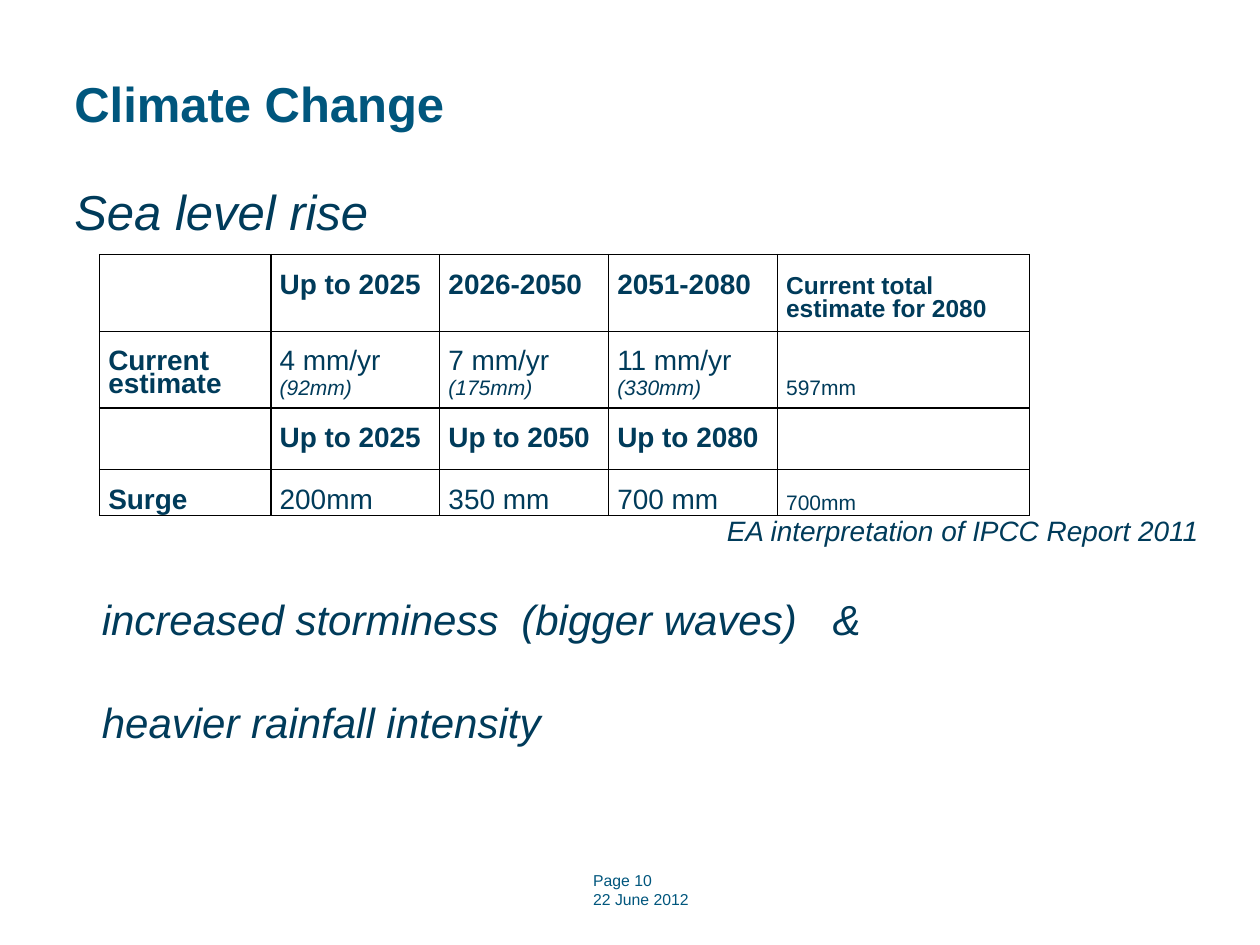
from typing import NamedTuple

from lxml import etree
from pptx import Presentation
from pptx import util as u
from pptx.dml.color import RGBColor
from pptx.enum import text
from pptx.oxml.ns import qn

NAVY = RGBColor(0x00, 0x3B, 0x5A)
TEAL = RGBColor(0x00, 0x56, 0x7D)
BLACK = RGBColor(0x00, 0x00, 0x00)
FONT = "Arial"
UNIT = u.Inches(0.1)  # the slide is a grid of 100 columns by 75 rows
TABLE_LINE = u.Pt(13)


class Box(NamedTuple):
    """Left, top, width and height in grid units."""
    left: float
    top: float
    width: float
    height: float

    def lengths(self) -> list[u.Emu]:
        return [u.Emu(round(v * UNIT)) for v in self]


class Style(NamedTuple):
    size: float
    color: RGBColor = NAVY
    bold: bool = False
    italic: bool = False


class Line(NamedTuple):
    words: str
    style: Style


class Cell(NamedTuple):
    lines: tuple[Line, ...] = ()
    skip: int = 1  # table lines left free above the text


TITLE = Style(28, TEAL, bold=True)
SUBTITLE = Style(28, italic=True)
EFFECT = Style(24, italic=True)
SOURCE = Style(16, italic=True)
FOOTER = Style(9, TEAL)
HEAD = Style(16, bold=True)
SMALL_HEAD = Style(14, bold=True)
VALUE = Style(16)
TOTAL = Style(12)
AMOUNT = Style(12, italic=True)


def one(words: str, style: Style, skip: int = 1) -> Cell:
    return Cell((Line(words, style),), skip)


def rate(yearly: str, amount: str) -> Cell:
    return Cell((Line(yearly, VALUE), Line(amount, AMOUNT)))


COLUMNS = (13.6, 13.4, 13.4, 13.4, 20)
ROWS = (6.1, 6.1, 3.65, 3.65)
CELLS = (
    (Cell(), one("Up to 2025", HEAD), one("2026-2050", HEAD), one("2051-2080", HEAD),
     one("Current total estimate for 2080", SMALL_HEAD)),
    (Cell((Line("Current", HEAD), Line("estimate", HEAD))), rate("4 mm/yr", "(92mm)"),
     rate("7 mm/yr", "(175mm)"), rate("11 mm/yr", "(330mm)"), one("597mm", TOTAL, skip=2)),
    (Cell(), *(one(f"Up to {year}", HEAD) for year in (2025, 2050, 2080)), Cell()),
    (one("Surge", HEAD), *(one(v, VALUE) for v in ("200mm", "350 mm", "700 mm")),
     one("700mm", TOTAL)),
)


def write(tf, lines: tuple[Line, ...]) -> None:
    for i, line in enumerate(lines):
        p = tf.add_paragraph() if i else tf.paragraphs[0]
        p.alignment = text.PP_ALIGN.LEFT
        r = p.add_run()
        r.text = line.words
        r.font.name = FONT
        r.font.size = u.Pt(line.style.size)
        r.font.bold = line.style.bold
        r.font.italic = line.style.italic
        r.font.color.rgb = line.style.color


def fill_placeholder(sp, box: Box, line: Line) -> None:
    sp.left, sp.top, sp.width, sp.height = box.lengths()
    tf = sp.text_frame
    tf.margin_left = 0
    tf.auto_size = text.MSO_AUTO_SIZE.NONE
    write(tf, (line,))


def add_text(slide, box: Box, lines: tuple[Line, ...]):
    tf = slide.shapes.add_textbox(*box.lengths()).text_frame
    tf.word_wrap = True
    write(tf, lines)
    return tf


def remove_bullet(p) -> None:
    pPr = p._p.get_or_add_pPr()
    pPr.set("marL", "0")
    pPr.set("indent", "0")
    etree.SubElement(pPr, qn("a:buNone"))


def add_tab_stops(p, stops: tuple[float, ...]) -> None:
    tabs = etree.SubElement(p._p.get_or_add_pPr(), qn("a:tabLst"))
    for stop in stops:
        etree.SubElement(tabs, qn("a:tab"), pos=str(round(stop * UNIT)), algn="l")


def draw_borders(cell) -> None:
    tcPr = cell._tc.get_or_add_tcPr()
    for i, side in enumerate("LRTB"):
        ln = etree.Element(qn(f"a:ln{side}"), w=str(u.Pt(1)))
        solid = etree.SubElement(ln, qn("a:solidFill"))
        etree.SubElement(solid, qn("a:srgbClr"), val=str(BLACK))
        tcPr.insert(i, ln)


def add_estimates(slide, left: float, top: float) -> None:
    box = Box(left, top, sum(COLUMNS), sum(ROWS))
    table = slide.shapes.add_table(len(ROWS), len(COLUMNS), *box.lengths()).table
    table.first_row = table.horz_banding = False
    for column, width in zip(table.columns, COLUMNS):
        column.width = u.Emu(round(width * UNIT))
    for row, height, contents in zip(table.rows, ROWS, CELLS):
        row.height = u.Emu(round(height * UNIT))
        for cell, content in zip(row.cells, contents):
            cell.margin_left = cell.margin_right = u.Inches(0.07)
            cell.margin_top = content.skip * TABLE_LINE
            cell.margin_bottom = 0
            cell.fill.background()
            draw_borders(cell)
            write(cell.text_frame, content.lines)
            for p in cell.text_frame.paragraphs:
                p.line_spacing = TABLE_LINE


def main() -> None:
    prs = Presentation()
    prs.slide_width, prs.slide_height = 100 * UNIT, 75 * UNIT
    slide = prs.slides.add_slide(prs.slide_layouts[1])

    title, body = slide.placeholders
    fill_placeholder(title, Box(5.9, 5.2, 91, 5.9), Line("Climate Change", TITLE))
    fill_placeholder(body, Box(5.9, 13.9, 90.6, 5.9), Line("Sea level rise", SUBTITLE))
    p = body.text_frame.paragraphs[0]
    p.space_before = u.Pt(0)
    remove_bullet(p)

    add_estimates(slide, 7.9, 20.2)
    add_text(slide, Box(56.7, 40.3, 43.3, 3.7),
             (Line("EA interpretation of IPCC Report 2011", SOURCE),))

    effects = add_text(slide, Box(7.1, 46.6, 75.2, 13.1),
                       (Line("increased storminess\t(bigger waves)\t&", EFFECT),
                        Line("heavier rainfall intensity", EFFECT)))
    storms, rainfall = effects.paragraphs
    add_tab_stops(storms, (33.3, 58))
    rainfall.space_before = u.Pt(30)

    add_text(slide, Box(46.1, 68.6, 19.7, 4),
             (Line("Page 10", FOOTER), Line("22 June 2012", FOOTER)))
    prs.save("out.pptx")


if __name__ == "__main__":
    main()
